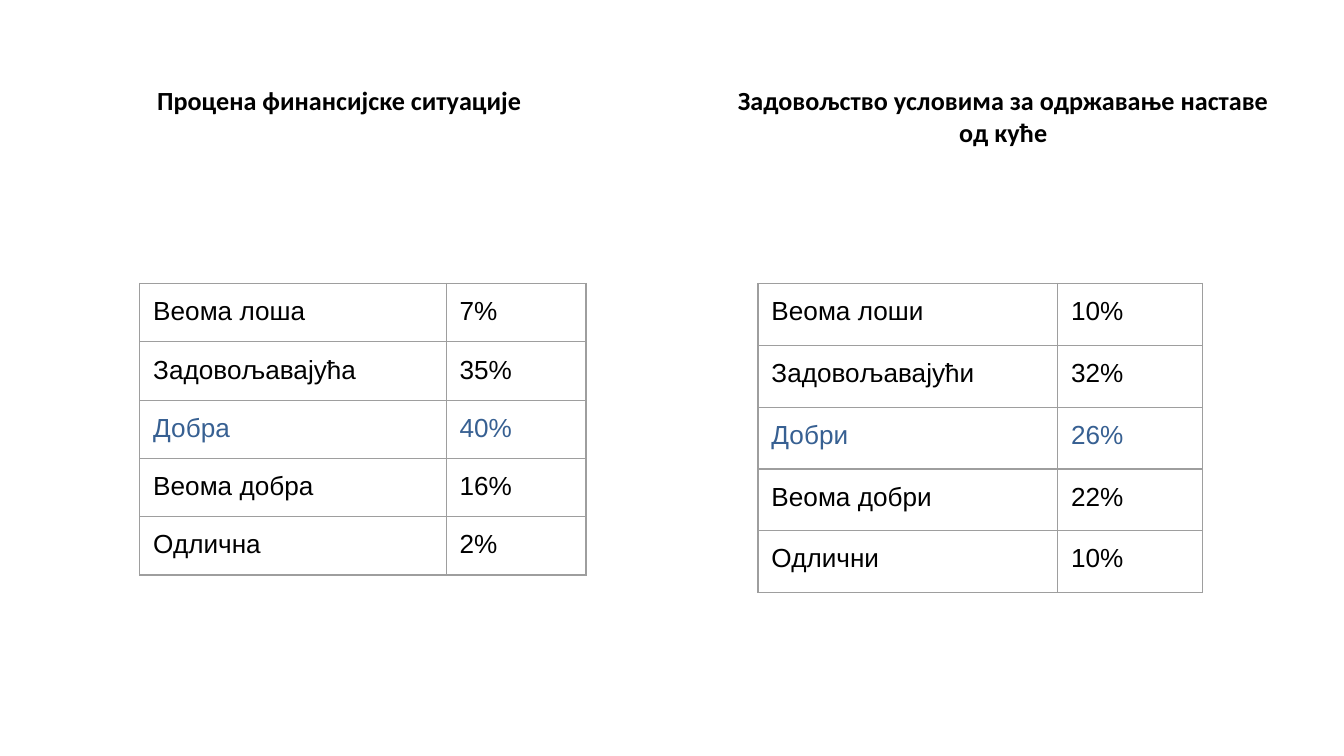
import pptx
import pptx.util
import pptx.dml.color
import pptx.enum.text
import pptx.oxml
import pptx.oxml.ns
from lxml import etree

Inches = pptx.util.Inches
Pt = pptx.util.Pt

COLORS = {"text": "000000", "accent": "376092", "border": "9E9E9E"}
HEADING = {"name": "Calibri", "size": Pt(14), "bold": True}
BODY = {"name": "Arial", "size": Pt(14), "bold": False}
MARGINS = {f"margin_{side}": Inches(0.1) for side in ("left", "top", "right", "bottom")}
HIGHLIGHT_ROW = 2
TABLE_HEIGHT = 2.5

PANELS = [
    {
        "box": (0.34, 0.53, 4.37, 4.46),
        "title": "Процена финансијске ситуације",
        "offset": (0.7, 1.58),
        "cols": (2.28, 1.04),
        "row_height": 0.35,
        "rows": [
            ("Веома лоша", "7%"),
            ("Задовољавајућа", "35%"),
            ("Добра", "40%"),
            ("Веома добра", "16%"),
            ("Одлична", "2%"),
        ],
    },
    {
        "box": (5.28, 0.53, 4.37, 4.46),
        "title": "Задовољство условима за одржавање наставе од куће",
        "offset": (0.36, 1.58),
        "cols": (2.23, 1.08),
        "row_height": 0.46,
        "rows": [
            ("Веома лоши", "10%"),
            ("Задовољавајући", "32%"),
            ("Добри", "26%"),
            ("Веома добри", "22%"),
            ("Одлични", "10%"),
        ],
    },
]


def set_attrs(obj, values):
    for name, value in values.items():
        setattr(obj, name, value)


def write(tf, text, fmt, color):
    p = tf.paragraphs[0]
    r = p.add_run()
    r.text = text
    set_attrs(r.font, fmt)
    r.font.color.rgb = pptx.dml.color.RGBColor.from_string(COLORS[color])
    return p


def add_borders(cell):
    qn = pptx.oxml.ns.qn
    tcPr = cell._tc.get_or_add_tcPr()
    for i, tag in enumerate(("a:lnL", "a:lnR", "a:lnT", "a:lnB")):
        ln = etree.Element(qn(tag), w=str(Pt(0.75)))
        fill = etree.SubElement(ln, qn("a:solidFill"))
        etree.SubElement(fill, qn("a:srgbClr"), val=COLORS["border"])
        tcPr.insert(i, ln)


def add_heading(s, box, title):
    tf = s.shapes.add_textbox(*map(Inches, box)).text_frame
    set_attrs(tf, {**MARGINS, "word_wrap": True})
    p = write(tf, title, HEADING, "text")
    p.alignment = pptx.enum.text.PP_ALIGN.CENTER


def add_rating_table(s, left, top, cols, row_height, rows):
    box = map(Inches, (left, top, sum(cols), TABLE_HEIGHT))
    frame = s.shapes.add_table(len(rows), len(cols), *box)
    table = frame.table
    set_attrs(table, {"first_row": False, "horz_banding": False})
    for column, width in zip(table.columns, cols):
        column.width = Inches(width)
    for i, values in enumerate(rows):
        table.rows[i].height = Inches(row_height)
        color = "accent" if i == HIGHLIGHT_ROW else "text"
        for j, value in enumerate(values):
            cell = table.cell(i, j)
            set_attrs(cell, MARGINS)
            cell.fill.background()
            add_borders(cell)
            write(cell.text_frame, value, BODY, color)
    frame.height = Inches(TABLE_HEIGHT)


def add_panel(s, box, title, offset, cols, row_height, rows):
    add_heading(s, box, title)
    add_rating_table(s, box[0] + offset[0], box[1] + offset[1], cols, row_height, rows)


def main():
    prs = pptx.Presentation()
    width = Inches(10)
    set_attrs(prs, {"slide_width": width, "slide_height": width * 9 // 16})
    s = prs.slides.add_slide(prs.slide_layouts[6])
    for panel in PANELS:
        add_panel(s, **panel)
    prs.save("out.pptx")


if __name__ == "__main__":
    main()
